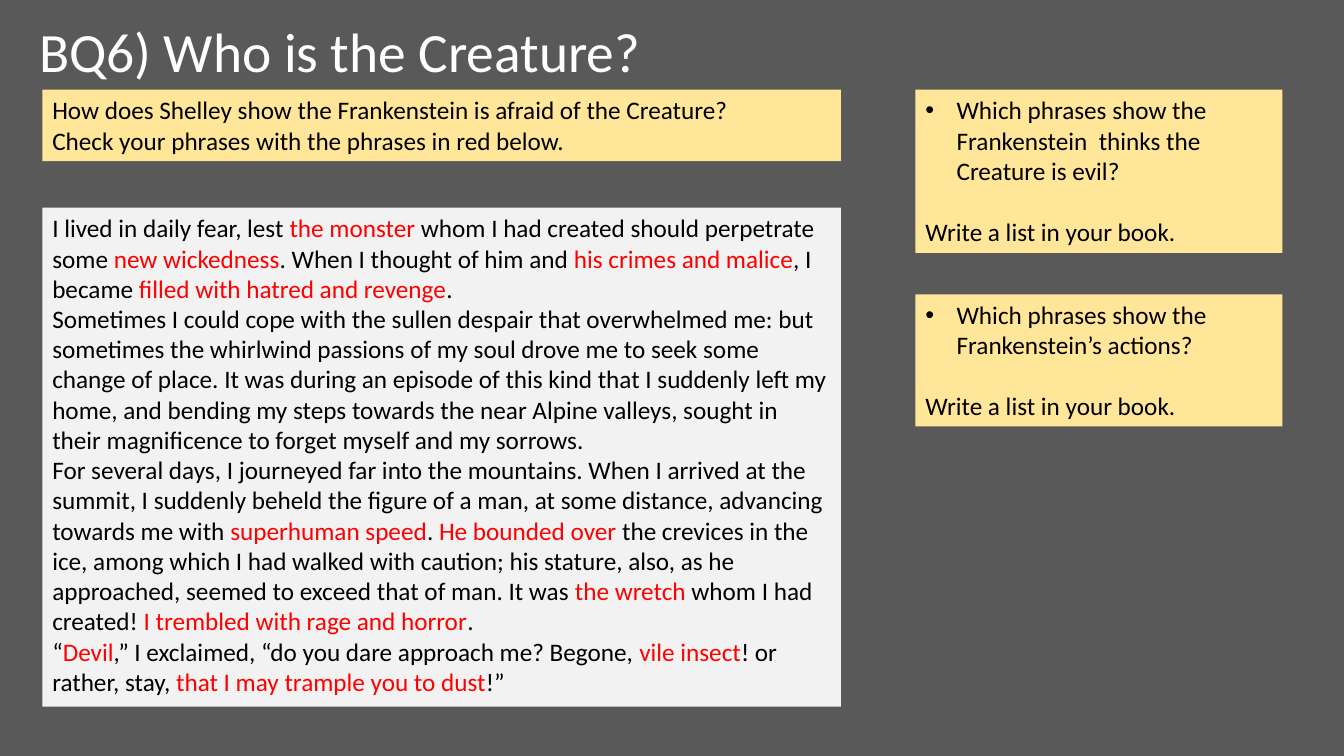
from pptx import Presentation
from pptx.dml.color import RGBColor
from pptx.enum.shapes import MSO_SHAPE
from pptx.enum.text import MSO_ANCHOR, PP_ALIGN
from pptx.oxml.ns import qn
from pptx.util import Inches, Pt
from lxml import etree

GREY, PALE, YELLOW = "595959", "F2F2F2", "FFE699"
WHITE, BLACK, RED = "FFFFFF", "000000", "FF0000"
LEFT_X, LEFT_W = 0.42, 7.92
RIGHT_X, RIGHT_W = 9.08, 3.64
TOP = 0.89

# Phrases between asterisks are shown in red
EXTRACT = [
    "I lived in daily fear, lest *the monster *whom I had created should "
    "perpetrate some *new wickedness*. When I thought of him and *his crimes "
    "and malice*, I became *filled with hatred and revenge*.",
    "Sometimes I could cope with the sullen despair that overwhelmed me: but "
    "sometimes the whirlwind passions of my soul drove me to seek some change "
    "of place. It was during an episode of this kind that I suddenly left my "
    "home, and bending my steps towards the near Alpine valleys, sought in "
    "their magnificence to forget myself and my sorrows.",
    "For several days, I journeyed far into the mountains. When I arrived at "
    "the summit, I suddenly beheld the figure of a man, at some distance, "
    "advancing towards me with *superhuman speed*. *He bounded over *the "
    "crevices in the ice, among which I had walked with caution; his stature, "
    "also, as he approached, seemed to exceed that of man. It was *the wretch "
    "*whom I had created! *I trembled with rage and horror*.",
    "“*Devil*,” I exclaimed, “do you dare approach me? Begone, *vile insect*! "
    "or rather, stay, *that I may trample you to dust*!”",
]
INSTRUCTIONS = [
    "How does Shelley show the Frankenstein is afraid of the Creature?",
    "Check your phrases with the phrases in red below.",
]
# Question, top, height
TASKS = [
    ("Which phrases show the Frankenstein  thinks the Creature is evil?", TOP, 1.62),
    ("Which phrases show the Frankenstein’s actions?", 2.92, 1.31),
]


def rgb(value):
    return RGBColor.from_string(value)


def apply_format(target, values):
    for name, value in values.items():
        setattr(target, name, value)


def add_run(p, text, color=BLACK, size=18):
    r = p.add_run()
    r.text = text
    apply_format(r.font, {"name": "Calibri", "size": Pt(size)})
    r.font.color.rgb = rgb(color)


def add_title(s, text):
    tf = s.shapes.add_textbox(Inches(0.29), Inches(0.33), Inches(11.26), Inches(0.42)).text_frame
    apply_format(tf, {"word_wrap": True, "vertical_anchor": MSO_ANCHOR.MIDDLE})
    p = tf.paragraphs[0]
    p.line_spacing = 0.9
    add_run(p, text, WHITE, 39.6)


def add_panel(s, x, y, w, h, fill, lines):
    sp = s.shapes.add_shape(MSO_SHAPE.RECTANGLE, Inches(x), Inches(y), Inches(w), Inches(h))
    sp.shadow.inherit = False
    sp.fill.solid()
    sp.fill.fore_color.rgb = rgb(fill)
    sp.line.fill.background()
    tf = sp.text_frame
    apply_format(tf, {"word_wrap": True, "vertical_anchor": MSO_ANCHOR.TOP})
    for i, line in enumerate(lines):
        p = tf.add_paragraph() if i else tf.paragraphs[0]
        p.alignment = PP_ALIGN.LEFT
        for j, part in enumerate(line.split("*")):
            if part:
                add_run(p, part, RED if j % 2 else BLACK)
    return tf


def add_bullet(p, indent=0.31):
    pPr = p._p.get_or_add_pPr()
    pPr.set("marL", str(Inches(indent)))
    pPr.set("indent", str(-Inches(indent)))
    etree.SubElement(pPr, qn("a:buFont")).set("typeface", "Arial")
    etree.SubElement(pPr, qn("a:buChar")).set("char", "•")


def add_task(s, question, y, h):
    tf = add_panel(s, RIGHT_X, y, RIGHT_W, h, YELLOW, [question, "Write a list in your book."])
    bullet, instruction = tf.paragraphs
    add_bullet(bullet)
    instruction.space_before = Pt(22)


def main():
    prs = Presentation()
    apply_format(prs, {"slide_width": Inches(13.33), "slide_height": Inches(7.5)})
    s = prs.slides.add_slide(prs.slide_layouts[6])
    s.background.fill.solid()
    s.background.fill.fore_color.rgb = rgb(GREY)

    # Title
    add_title(s, "BQ6) Who is the Creature?")

    # Extract and its instructions
    add_panel(s, LEFT_X, 2.06, LEFT_W, 4.95, PALE, EXTRACT)
    add_panel(s, LEFT_X, TOP, LEFT_W, 0.71, YELLOW, INSTRUCTIONS)

    # Tasks on the right
    for question, y, h in TASKS:
        add_task(s, question, y, h)

    prs.save("out.pptx")


if __name__ == "__main__":
    main()
